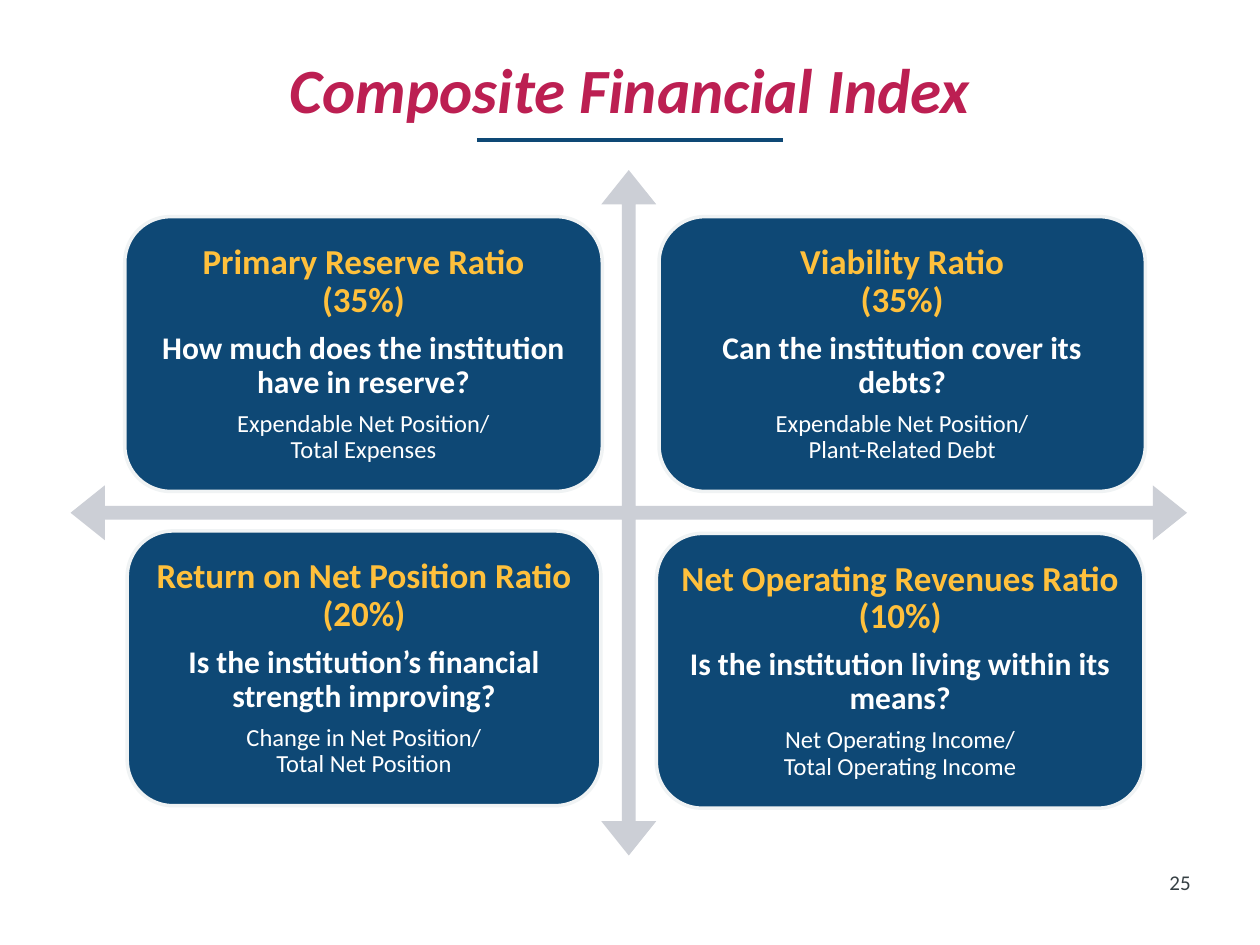
from lxml import etree
from pptx import Presentation
from pptx.dml.color import RGBColor
from pptx.enum import shapes, text
from pptx.oxml import ns
from pptx.util import Pt

COLORS = {
    "title": "BC1F52",
    "navy": "0E4875",
    "gold": "FFC03C",
    "white": "FFFFFF",
    "arrow": "CCCFD6",
    "border": "F0F3F4",
    "number": "364044",
}
FORMATS = {
    "title": {"size": Pt(36), "bold": True, "italic": True, "color": "title"},
    "heading": {"size": Pt(20), "bold": True, "color": "gold"},
    "question": {"size": Pt(18), "bold": True, "color": "white"},
    "formula": {"size": Pt(14), "bold": False, "color": "white"},
    "number": {"size": Pt(12), "color": "number"},
}
GAPS = {"heading": Pt(7), "question": Pt(6.3)}
RATIOS = [
    ((71.3, 123.8, 272.9, 157), ["Primary Reserve Ratio", "(35%)"],
     "How much does the institution have in reserve?",
     ["Expendable Net Position/", "Total Expenses"]),
    ((376.6, 123.8, 277.9, 157), ["Viability Ratio", "(35%)"],
     "Can the institution cover its debts?",
     ["Expendable Net Position/", "Plant-Related Debt"]),
    ((72.7, 303.4, 270.7, 157), ["Return on Net Position Ratio (20%)"],
     "Is the institution’s financial strength improving?",
     ["Change in Net Position/", "Total Net Position"]),
    ((375.1, 304.8, 278.6, 157), ["Net Operating Revenues Ratio (10%)"],
     "Is the institution living within its means?",
     ["Net Operating Income/", "Total Operating Income"]),
]


def color(name):
    return RGBColor.from_string(COLORS[name])


def write_paragraphs(frame, lines, alignment, spacing=1.0):
    for index, (words, style, gap) in enumerate(lines):
        paragraph = frame.paragraphs[0] if index == 0 else frame.add_paragraph()
        layout = {"alignment": alignment, "line_spacing": spacing,
                  "space_before": Pt(0), "space_after": gap}
        for name, value in layout.items():
            setattr(paragraph, name, value)
        font = paragraph.add_run().font
        paragraph.runs[0].text = words
        font.name = "Calibri"
        for name, value in FORMATS[style].items():
            if name == "color":
                font.color.rgb = color(value)
            else:
                setattr(font, name, value)


def prepare_frame(shape, margin):
    frame = shape.text_frame
    settings = {"word_wrap": True, "vertical_anchor": text.MSO_ANCHOR.MIDDLE}
    settings.update({f"margin_{side}": Pt(margin)
                     for side in ("left", "top", "right", "bottom")})
    for name, value in settings.items():
        setattr(frame, name, value)
    return frame


def add_filled_shape(slide, kind, box, fill):
    shape = slide.shapes.add_shape(kind, *map(Pt, box))
    shape.shadow.inherit = False
    shape.fill.solid()
    shape.fill.fore_color.rgb = color(fill)
    shape.line.fill.background()
    return shape


def add_title(slide, box, words):
    left, top, width, height = box
    middle, rule_top, half = left + width / 2, top + height + 0.7, 87.5
    rule = slide.shapes.add_connector(
        shapes.MSO_CONNECTOR.STRAIGHT,
        Pt(middle - half), Pt(rule_top), Pt(middle + half), Pt(rule_top))
    rule.line.color.rgb = color("navy")
    rule.line.width = Pt(2)
    etree.SubElement(rule._element.spPr, ns.qn("a:effectLst"))
    title = slide.shapes.add_textbox(*map(Pt, box))
    write_paragraphs(prepare_frame(title, 4), [(words, "title", Pt(0))],
                     text.PP_ALIGN.CENTER)


def add_axes(slide, box):
    axes = add_filled_shape(slide, shapes.MSO_SHAPE.QUAD_ARROW, box, "arrow")
    for index, value in enumerate((0.02, 0.04, 0.05)):
        axes.adjustments[index] = value


def add_ratio_card(slide, box, headings, question, formula):
    card = add_filled_shape(slide, shapes.MSO_SHAPE.ROUNDED_RECTANGLE, box, "navy")
    card.line.color.rgb = color("border")
    card.line.width = Pt(2)
    lines = [(words, "heading", Pt(0)) for words in headings[:-1]]
    lines.append((headings[-1], "heading", GAPS["heading"]))
    lines.append((question, "question", GAPS["question"]))
    lines += [(words, "formula", Pt(0)) for words in formula]
    write_paragraphs(prepare_frame(card, 6), lines, text.PP_ALIGN.CENTER, 0.9)


def add_slide_number(slide, box, number):
    shape = slide.shapes.add_textbox(*map(Pt, box))
    frame = prepare_frame(shape, 0)
    frame.vertical_anchor = text.MSO_ANCHOR.TOP
    write_paragraphs(frame, [(number, "number", Pt(6))], text.PP_ALIGN.RIGHT)


def main():
    presentation = Presentation()
    presentation.slide_width, presentation.slide_height = Pt(720), Pt(540)
    slide = presentation.slides.add_slide(presentation.slide_layouts[6])
    add_title(slide, (36, 21.6, 648, 57.6), "Composite Financial Index")
    add_slide_number(slide, (648, 496.8, 32.4, 15.8), "25")
    add_axes(slide, (40.3, 97.2, 638, 391.7))
    for ratio in RATIOS:
        add_ratio_card(slide, *ratio)
    presentation.save("out.pptx")


if __name__ == "__main__":
    main()
